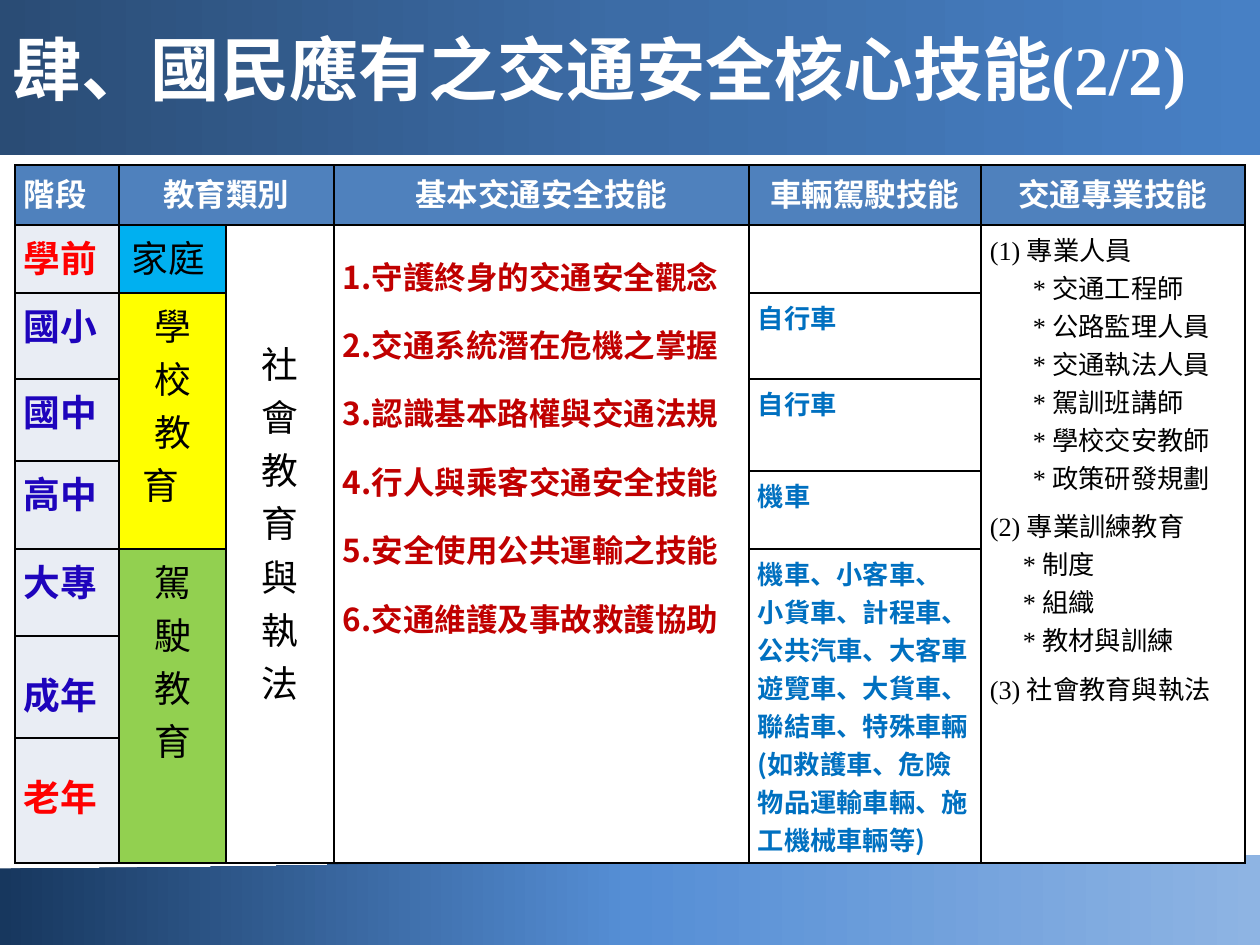
from copy import deepcopy

from lxml.etree import SubElement
from pptx import Presentation
from pptx.dml.color import RGBColor
from pptx.enum.shapes import MSO_SHAPE
from pptx.enum.text import MSO_ANCHOR, PP_ALIGN
from pptx.oxml import parse_xml
from pptx.oxml.ns import nsdecls, qn
from pptx.util import Pt

SCALE = 914400 / 126
SANS = "Noto Sans CJK SC"
SERIF = "Times New Roman"

WHITE = RGBColor(0xFF, 0xFF, 0xFF)
BLACK = RGBColor(0, 0, 0)
RED = RGBColor(0xFF, 0, 0)
WINE = RGBColor(0xC0, 0, 0)
INDIGO = RGBColor(0x1E, 0x04, 0xBC)
BLUE = RGBColor(0, 0x70, 0xC0)
HEAD = RGBColor(0x4F, 0x81, 0xBD)
PALE = RGBColor(0xE9, 0xED, 0xF4)
SKY = RGBColor(0, 0xB0, 0xF0)
YELLOW = RGBColor(0xFF, 0xFF, 0)
GREEN = RGBColor(0x92, 0xD0, 0x50)
TOP = [RGBColor(0x2A, 0x4C, 0x75), RGBColor(0x3C, 0x6C, 0xA6), RGBColor(0x47, 0x80, 0xC5)]
WAVE = [RGBColor(0x17, 0x37, 0x5E), RGBColor(0x55, 0x8E, 0xD5), RGBColor(0x8E, 0xB4, 0xE3)]

COLS = [104, 107, 108, 415, 232, 264]
ROWS = [60, 68, 86, 82, 10, 78, 87, 102, 101]
HEADS = [(0, "階段"), (1, "教育類別"), (3, "基本交通安全技能"),
         (4, "車輛駕駛技能"), (5, "交通專業技能")]
STAGES = [(1, 1, "學前", RED), (2, 1, "國小", INDIGO), (3, 1, "國中", INDIGO),
          (4, 2, "高中", INDIGO), (6, 1, "大專", INDIGO), (7, 1, "成年", INDIGO),
          (8, 1, "老年", RED)]
SKILLS = ["1.守護終身的交通安全觀念", "2.交通系統潛在危機之掌握", "3.認識基本路權與交通法規",
          "4.行人與乘客交通安全技能", "5.安全使用公共運輸之技能", "6.交通維護及事故救護協助"]
DRIVING = [(2, 1, ["自行車"]), (3, 2, ["自行車"]), (5, 1, ["機車"]),
           (6, 3, ["機車、小客車、", "小貨車、計程車、",
                   "公共汽車、大客車遊覽車、大貨車、聯結車、特殊車輛(如救護車、危險物品運輸車輛、施工機械車輛等)"])]
EXPERTS = [("(1) 專業人員", 0, ["交通工程師", "公路監理人員", "交通執法人員",
                            "駕訓班講師", "學校交安教師", "政策研發規劃"]),
           ("(2) 專業訓練教育", 33, ["制度", "組織", "教材與訓練"]),
           ("(3) 社會教育與執法", 0, [])]


def px(n):
    return round(n * SCALE)


def style(run, size, color, bold=False, face=SANS):
    font = run.font
    font.size = Pt(size)
    font.bold = bold
    font.color.rgb = color
    font.name = face
    SubElement(run._r.get_or_add_rPr(), qn("a:ea")).set("typeface", SANS)


def indent(para, left):
    para._p.get_or_add_pPr().set("marL", str(px(left)))


def band(slide, kind, box, colors, turn=0):
    shape = slide.shapes.add_shape(kind, *map(px, box))
    shape.shadow.inherit = False
    shape.line.fill.background()
    shape.rotation = turn
    fill = shape.fill
    fill.gradient()
    stops = shape._element.spPr.find(".//" + qn("a:gsLst"))
    stops.insert(1, deepcopy(stops[0]))
    for stop, place, color in zip(fill.gradient_stops, (0, 0.5, 1), colors):
        stop.position = place
        stop.color.rgb = color
    fill.gradient_angle = turn


def title(slide):
    frame = slide.shapes.add_textbox(0, 0, px(1245), px(135)).text_frame
    frame.word_wrap = True
    frame.vertical_anchor = MSO_ANCHOR.MIDDLE
    para = frame.paragraphs[0]
    for text, face in (("肆、國民應有之交通安全核心技能", SANS), ("(2/2)", SERIF)):
        run = para.add_run()
        run.text = text
        style(run, 39.6, WHITE, True, face)


def frame_cell(cell):
    cell.fill.solid()
    cell.fill.fore_color.rgb = WHITE
    cell.margin_left = cell.margin_right = px(9)
    cell.margin_top = cell.margin_bottom = px(5)
    props = cell._tc.get_or_add_tcPr()
    for at, side in enumerate(("lnL", "lnR", "lnT", "lnB")):
        props.insert(at, parse_xml(
            f'<a:{side} {nsdecls("a")} w="12700"><a:solidFill>'
            f'<a:srgbClr val="{BLACK}"/></a:solidFill></a:{side}>'))


def grid(slide):
    shape = slide.shapes.add_table(len(ROWS), len(COLS), px(15), px(165),
                                   px(sum(COLS)), px(sum(ROWS)))
    table = shape.table
    for col, width in zip(table.columns, COLS):
        col.width = px(width)
    for row, height in zip(table.rows, ROWS):
        row.height = px(height)
    for cell in table.iter_cells():
        frame_cell(cell)
    return table


def put(table, row, col, lines, size, color, fill=WHITE, bold=False, face=SANS,
        mid=False, deep=1, wide=1, space=None):
    cell = table.cell(row, col)
    if deep * wide > 1:
        cell.merge(table.cell(row + deep - 1, col + wide - 1))
    cell.fill.solid()
    cell.fill.fore_color.rgb = fill
    frame = cell.text_frame
    frame.text = "\n".join(lines)
    for para in frame.paragraphs:
        para.alignment = PP_ALIGN.CENTER if mid else PP_ALIGN.LEFT
        para.line_spacing = space
        for run in para.runs:
            style(run, size, color, bold, face)
    return cell


def experts(table):
    lines, lefts, gaps = [], [], []
    for head, left, items in EXPERTS:
        gaps.append(len(lines))
        lines += [head] + ["* " + item for item in items]
        lefts += [0] + [left or 43] * len(items)
    cell = put(table, 1, 5, lines, 15, BLACK, face=SERIF, deep=8)
    paras = cell.text_frame.paragraphs
    for para, left in zip(paras, lefts):
        indent(para, left)
    for at in gaps[1:]:
        paras[at].space_before = Pt(6)


def fill_grid(table):
    for col, text in HEADS:
        put(table, 0, col, [text], 18, WHITE, HEAD, True, mid=col > 0,
            wide=2 if col == 1 else 1)
    for row, deep, text, color in STAGES:
        put(table, row, 0, [text], 21, color, PALE, True, deep=deep,
            space=1.5 if row > 6 else None)
    put(table, 1, 1, ["家庭 "], 21, BLACK, SKY, mid=True)
    school = put(table, 2, 1, "學校教育", 21, BLACK, YELLOW, mid=True, deep=4)
    last = school.text_frame.paragraphs[-1]
    last.alignment = PP_ALIGN.LEFT
    indent(last, 15)
    put(table, 6, 1, "駕駛教育", 21, BLACK, GREEN, mid=True, deep=3)
    social = put(table, 1, 2, "社會教育與執法", 21, BLACK, mid=True, deep=8)
    social.margin_top = px(111)
    put(table, 1, 3, SKILLS, 18, WINE, bold=True, deep=8, space=1.5)
    for row, deep, lines in DRIVING:
        put(table, row, 4, lines, 15, BLUE, bold=True, deep=deep)
    experts(table)


def main():
    deck = Presentation()
    deck.slide_width, deck.slide_height = px(1260), px(945)
    slide = deck.slides.add_slide(deck.slide_layouts[6])
    band(slide, MSO_SHAPE.FLOWCHART_DOCUMENT, (0, 849, 1260, 97), WAVE, 180)
    band(slide, MSO_SHAPE.RECTANGLE, (0, 0, 1260, 155), TOP)
    fill_grid(grid(slide))
    title(slide)
    deck.save("out.pptx")


if __name__ == "__main__":
    main()
